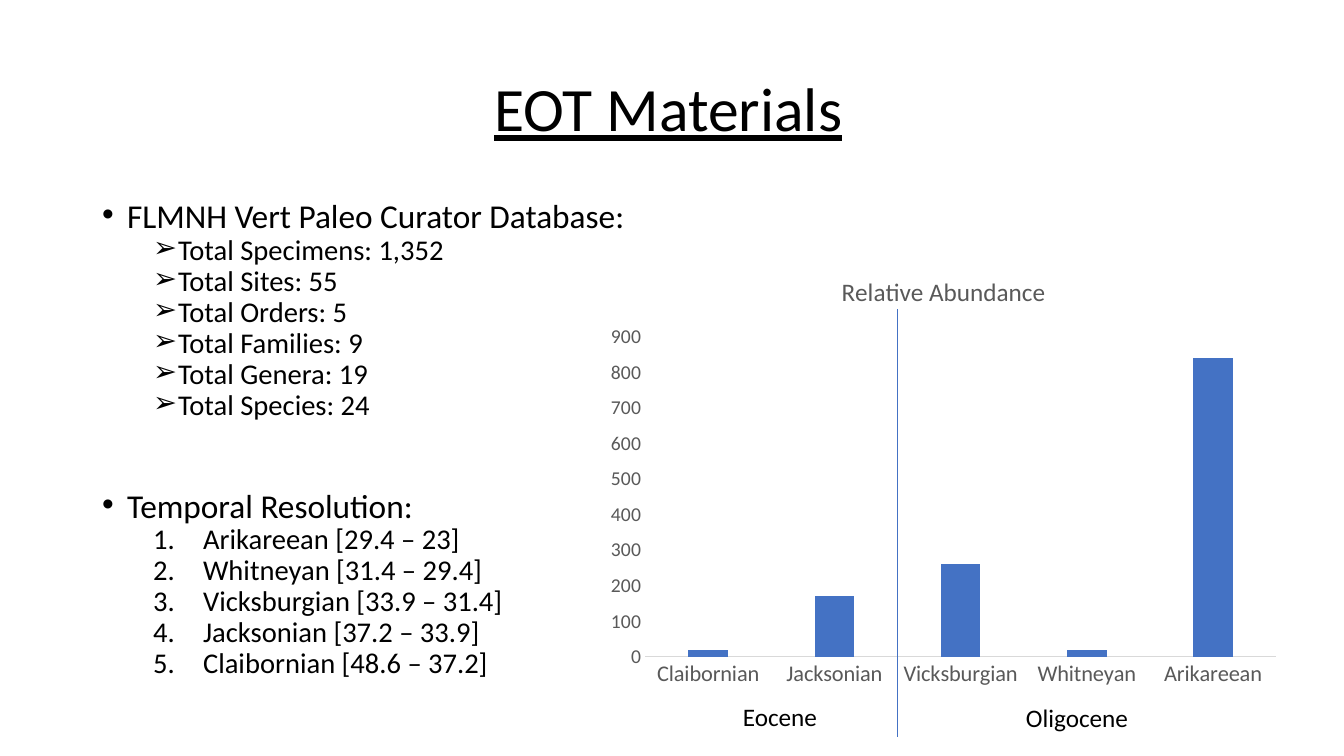
import pptx
import pptx.chart.data
import pptx.dml.color
import pptx.enum.chart
import pptx.enum.shapes
import pptx.enum.text
import pptx.oxml
import pptx.oxml.ns
import pptx.util

PX = 914400 / 100.8


def px(*lengths):
    return [pptx.util.Emu(round(length * PX)) for length in lengths]


def style(font, size, colour):
    font.name = "Calibri"
    font.size = pptx.util.Pt(size)
    font.bold = False
    font.color.rgb = pptx.dml.color.RGBColor.from_string(colour)


deck = pptx.Presentation()
deck.slide_width, deck.slide_height = px(1344, 756)
page = deck.slides.add_slide(deck.slide_layouts[1])

title = page.shapes.title
title.left, title.top, title.width, title.height = px(93, 39, 1151, 146)
title.text_frame.text = "EOT Materials"
title.text_frame.vertical_anchor = pptx.enum.text.MSO_ANCHOR.MIDDLE
heading = title.text_frame.paragraphs[0]
heading.alignment = pptx.enum.text.PP_ALIGN.CENTER
heading.line_spacing = 0.9
style(heading.runs[0].font, 44, "000000")
heading.runs[0].font.underline = True

ARROW = '<a:buChar {} char="➢"/>'
NUMBER = '<a:buAutoNum {} type="arabicPeriod"/>'
sections = [
    ("FLMNH Vert Paleo Curator Database:", 10, ARROW, 76, -25, [
        "Total Specimens: 1,352", "Total Sites: 55", "Total Orders: 5",
        "Total Families: 9", "Total Genera: 19", "Total Species: 24"]),
    ("Temporal Resolution:", 54, NUMBER, 101, -50, [
        "Arikareean [29.4 – 23]", "Whitneyan [31.4 – 29.4]",
        "Vicksburgian [33.9 – 31.4]", "Jacksonian [37.2 – 33.9]",
        "Claibornian [48.6 – 37.2]"]),
]
lines = []
for section, gap, marker, margin, indent, items in sections:
    lines.append((section, 0, 23.8, gap, '<a:buChar {} char="•"/>', 25, -25))
    lines += [(item, 1, 20.4, 5, marker, margin, indent) for item in items]

body = page.placeholders[1]
body.left, body.top, body.width, body.height = px(92, 201, 1159, 480)
frame = body.text_frame
frame.auto_size = pptx.enum.text.MSO_AUTO_SIZE.NONE
frame.text = "\n".join(line[0] for line in lines)
for para, (words, level, size, gap, bullet, margin, indent) in zip(frame.paragraphs, lines):
    para.level = level
    para.line_spacing = 0.7
    para.space_before = pptx.util.Pt(gap)
    style(para.runs[0].font, size, "000000")
    properties = para._p.get_or_add_pPr()
    properties.set("marL", str(px(margin)[0]))
    properties.set("indent", str(px(indent)[0]))
    namespace = pptx.oxml.ns.nsdecls("a")
    properties.append(pptx.oxml.parse_xml(f'<a:buFont {namespace} typeface="Arial"/>'))
    properties.append(pptx.oxml.parse_xml(bullet.format(namespace)))

data = pptx.chart.data.CategoryChartData()
data.categories = ["Claibornian", "Jacksonian", "Vicksburgian", "Whitneyan", "Arikareean"]
data.add_series("Series 1", [20, 170, 260, 20, 840])
chart = page.shapes.add_chart(
    pptx.enum.chart.XL_CHART_TYPE.COLUMN_CLUSTERED, *px(597, 256, 693, 441), data).chart
style(chart.font, 10, "000000")
chart.has_legend = False
chart.has_title = True
chart.chart_title.text_frame.text = "Relative Abundance"
style(chart.chart_title.text_frame.paragraphs[0].runs[0].font, 18, "595959")

plot = chart.plots[0]
plot.vary_by_categories = False
plot.gap_width = 219
plot.overlap = -27
bars = plot.series[0].format.fill
bars.solid()
bars.fore_color.rgb = pptx.dml.color.RGBColor.from_string("4472C4")

for axis, size in ((chart.category_axis, 16), (chart.value_axis, 14)):
    axis.has_major_gridlines = False
    axis.major_tick_mark = pptx.enum.chart.XL_TICK_MARK.NONE
    style(axis.tick_labels.font, size, "595959")
chart.value_axis.minimum_scale = 0
chart.value_axis.maximum_scale = 900
chart.value_axis.major_unit = 100
chart.value_axis.format.line.fill.background()
baseline = chart.category_axis.format.line
baseline.color.rgb = pptx.dml.color.RGBColor.from_string("D9D9D9")
baseline.width = pptx.util.Pt(0.75)

for epoch, left, top, width in (("Eocene", 658, 696, 244), ("Oligocene", 902, 697, 350)):
    box = page.shapes.add_textbox(*px(left, top, width, 41))
    box.text_frame.word_wrap = True
    box.text_frame.text = epoch
    label = box.text_frame.paragraphs[0]
    label.alignment = pptx.enum.text.PP_ALIGN.CENTER
    style(label.runs[0].font, 18, "000000")

divider = page.shapes.add_connector(
    pptx.enum.shapes.MSO_CONNECTOR.STRAIGHT, *px(897, 737, 897, 309))
divider.line.width = pptx.util.Pt(0.5)
divider.line.color.rgb = pptx.dml.color.RGBColor.from_string("4472C4")
divider._element.spPr.append(
    pptx.oxml.parse_xml(f'<a:effectLst {pptx.oxml.ns.nsdecls("a")}/>'))

deck.save("out.pptx")
